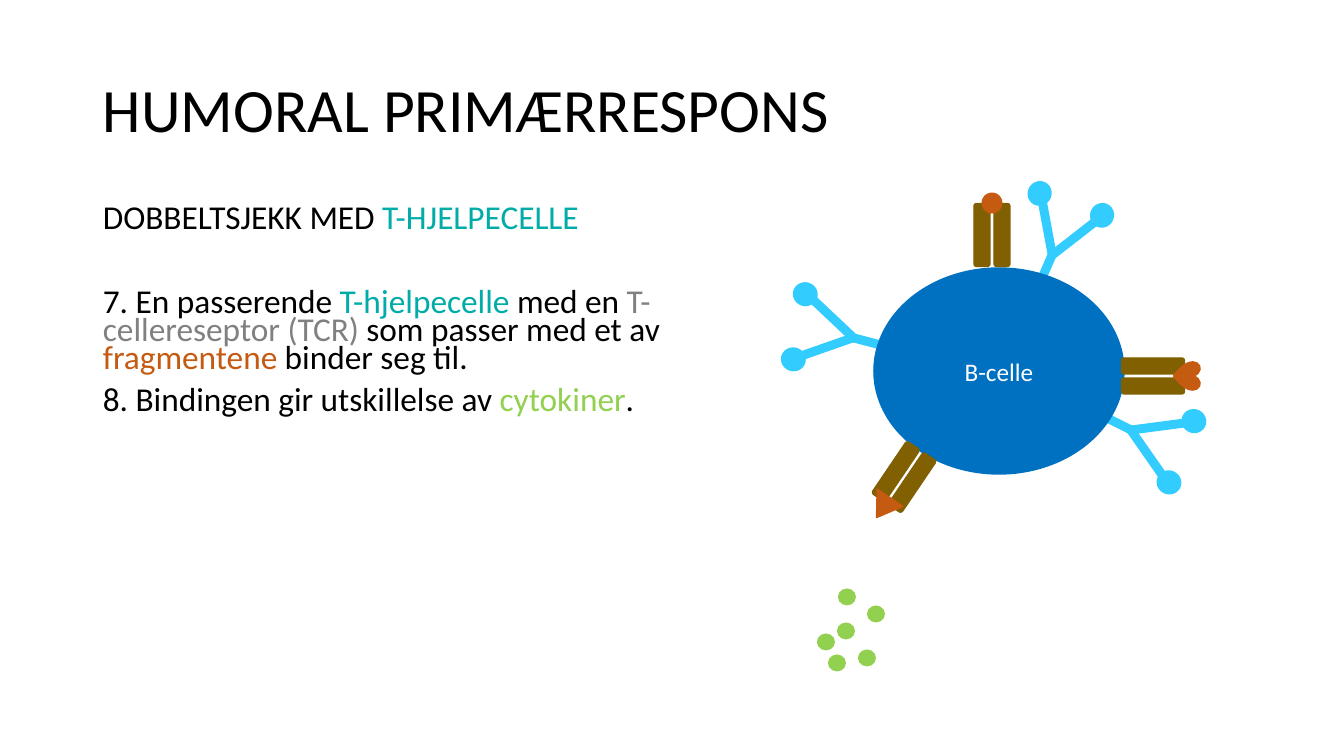
import math

import pptx
import pptx.dml.color
import pptx.enum.shapes
import pptx.enum.text
import pptx.util

SHAPE = pptx.enum.shapes.MSO_SHAPE
ANCHOR = pptx.enum.text.MSO_ANCHOR
ALIGN = pptx.enum.text.PP_ALIGN

BLACK, WHITE = "000000", "FFFFFF"
TEAL, GREY, ORANGE, GREEN = "00ACA8", "808080", "C55A11", "92D050"
SKY, BLUE, BROWN = "33CCFF", "0070C0", "806000"

BODY = [
    (10, [("DOBBELTSJEKK MED ", BLACK), ("T-HJELPECELLE", TEAL)]),
    (40, [("7. En passerende ", BLACK), ("T-hjelpecelle", TEAL), (" med en ", BLACK),
          ("T-cellereseptor (TCR)", GREY), (" som passer med et av ", BLACK),
          ("fragmentene", ORANGE), (" binder seg til.", BLACK)]),
    (10, [("8. Bindingen gir utskillelse av ", BLACK), ("cytokiner", GREEN), (".", BLACK)]),
]
CYTOKINES = [(826, 642), (837, 663), (846, 631), (867, 658), (847, 597), (876, 614)]
ANTIBODIES = [(1043, 276, 293.5, 57), (1109, 419, 26.5, 59), (877, 344, 194.7, 59)]
RECEPTORS = [
    (992, 235, 0, SHAPE.OVAL, 32, 21, 21, None),
    (904, 477, 214.1, SHAPE.ISOSCELES_TRIANGLE, 37, 31, 24, ORANGE),
    (1153, 376, 90, SHAPE.HEART, 34, 28, 27, ORANGE),
]


def color(value):
    return pptx.dml.color.RGBColor.from_string(value)


def px(value):
    return pptx.util.Emu(round(value * 914400 / 100.8))


def turned(x, y, dx, dy, angle):
    cosine, sine = math.cos(math.radians(angle)), math.sin(math.radians(angle))
    return x + dx * cosine - dy * sine, y + dx * sine + dy * cosine


class CellSlide:
    """Draws the cell diagram and its text on one slide."""

    font = "Calibri"

    def __init__(self, slide):
        self.slide = slide

    def style(self, run, size, fill):
        run.font.name = self.font
        run.font.size = pptx.util.Pt(size)
        run.font.color.rgb = color(fill)

    def text(self, x, y, width, height, paragraphs, size, spacing, anchor):
        box = self.slide.shapes.add_textbox(px(x), px(y), px(width), px(height))
        frame = box.text_frame
        frame.word_wrap = True
        frame.vertical_anchor = anchor
        for index, (before, pieces) in enumerate(paragraphs):
            paragraph = frame.add_paragraph() if index else frame.paragraphs[0]
            paragraph.line_spacing = spacing
            paragraph.space_before = pptx.util.Pt(before)
            for words, fill in pieces:
                run = paragraph.add_run()
                run.text = words
                self.style(run, size, fill)

    def shape(self, kind, x, y, width, height, fill, line=None, angle=0, group=None):
        parent = group or self.slide
        shape = parent.shapes.add_shape(
            kind, px(x - width / 2), px(y - height / 2), px(width), px(height))
        shape.rotation = angle
        shape.shadow.inherit = False
        shape.fill.solid()
        shape.fill.fore_color.rgb = color(fill)
        if line:
            shape.line.color.rgb = color(line)
            shape.line.width = pptx.util.Pt(1)
        else:
            shape.line.fill.background()
        return shape

    def cell(self, x, y, width, height, label):
        shape = self.shape(SHAPE.OVAL, x, y, width, height, BLUE, BLUE)
        frame = shape.text_frame
        frame.text = label
        frame.vertical_anchor = ANCHOR.MIDDLE
        frame.paragraphs[0].alignment = ALIGN.CENTER
        self.style(frame.paragraphs[0].runs[0], 18, WHITE)

    def antibody(self, x, y, angle, length):
        group = self.slide.shapes.add_group_shape()
        stretch = length / 59
        for dx, dy, turn in [(0, 0, 0), (47, -15, -34), (48, 13, 28.6)]:
            center = turned(x, y, dx * stretch, dy, angle)
            self.shape(SHAPE.RECTANGLE, *center, length, 9, SKY,
                       angle=(angle + turn) % 360, group=group)
        for dx, dy in [(77, -36), (82, 30)]:
            center = turned(x, y, dx * stretch, dy, angle)
            self.shape(SHAPE.OVAL, *center, 25, 24, SKY, angle=angle, group=group)

    def receptor(self, x, y, angle, kind, reach, width, height, line):
        group = self.slide.shapes.add_group_shape()
        for side in (-10, 10):
            self.shape(SHAPE.ROUNDED_RECTANGLE, *turned(x, y, side, 0, angle), 16, 63,
                       BROWN, BROWN, angle, group)
        self.shape(kind, *turned(x, y, 0, -reach, angle), width, height,
                   ORANGE, line, angle, group)


def main():
    presentation = pptx.Presentation()
    presentation.slide_width, presentation.slide_height = px(1344), px(756)
    slide = presentation.slides.add_slide(presentation.slide_layouts[6])
    drawing = CellSlide(slide)
    for x, y in CYTOKINES:
        drawing.shape(SHAPE.OVAL, x, y, 18, 17, GREEN)
    drawing.text(93, 40, 1159, 146, [(0, [("HUMORAL PRIMÆRRESPONS", BLACK)])],
                 44, 0.9, ANCHOR.MIDDLE)
    drawing.text(93, 202, 658, 236, BODY, 23.8, 0.7, ANCHOR.TOP)
    for antibody in ANTIBODIES:
        drawing.antibody(*antibody)
    drawing.cell(999, 371, 250, 206, "B-celle")
    for receptor in RECEPTORS:
        drawing.receptor(*receptor)
    presentation.save("out.pptx")


if __name__ == "__main__":
    main()
